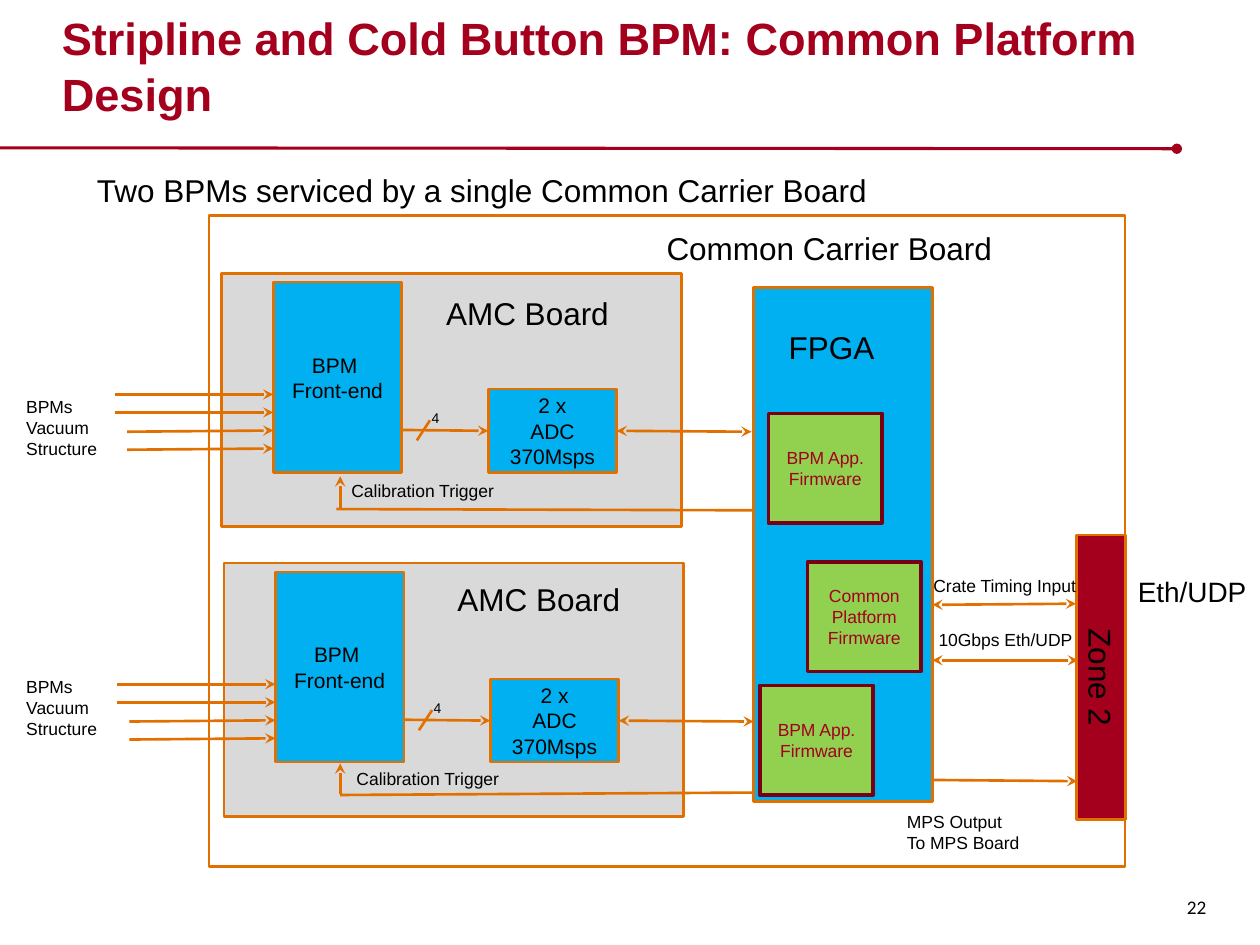
"""Build the slide on the common platform design of the BPMs."""
from lxml.etree import SubElement as Sub
from pptx import Presentation
from pptx.dml.color import RGBColor
from pptx.enum.shapes import MSO_CONNECTOR as Conn, MSO_SHAPE as Form
from pptx.enum.text import MSO_ANCHOR as Anchor, MSO_AUTO_SIZE as Auto, PP_ALIGN as Align
from pptx.oxml.ns import qn
from pptx.util import Pt

RED, ORANGE, BLUE, GREEN = "A4001D", "E17000", "00B0F0", "92D050"
WHITE, GREY, BLACK, MAROON = "FFFFFF", "D9D9D9", "000000", "780015"


def tint(code):
    return RGBColor.from_string(code)


class Pen:
    def __init__(self, slide, face="Arial"):
        self.slide = slide
        self.face = face

    def letter(self, frame, text, size, color=BLACK, align=Align.LEFT,
               anchor=Anchor.TOP, pad=7.2, wrap=True, face=None, bold=False):
        frame.auto_size = Auto.NONE
        frame.word_wrap = wrap
        frame.vertical_anchor = anchor
        frame.margin_left = frame.margin_right = Pt(pad)
        frame.margin_top = frame.margin_bottom = Pt(pad)
        for index, line in enumerate(text.split("\n")):
            para = frame.add_paragraph() if index else frame.paragraphs[0]
            para.alignment = align
            run = para.add_run()
            run.text = line
            run.font.size = Pt(size)
            run.font.name = face or self.face
            run.font.bold = bold
            run.font.color.rgb = tint(color)

    def title(self, text, x, y, w, h):
        shape = self.slide.shapes.title
        shape.left, shape.top, shape.width, shape.height = map(Pt, (x, y, w, h))
        self.letter(shape.text_frame, text, 25.8, RED, anchor=Anchor.BOTTOM,
                    pad=0, bold=True)
        shape.text_frame.paragraphs[0].line_spacing = 1.04

    def label(self, text, x, y, w, h, size=10, **style):
        box = self.slide.shapes.add_textbox(*map(Pt, (x, y, w, h)))
        self.letter(box.text_frame, text, size, **style)

    def head(self, text, x, y, w, h=27.4, size=18):
        self.label(text, x, y, w, h, size, pad=3.6, wrap=False)

    def block(self, x, y, w, h, fill, text="", size=12, color=BLACK,
              edge=ORANGE, thick=1.5, turn=0):
        shape = self.slide.shapes.add_shape(Form.RECTANGLE, *map(Pt, (x, y, w, h)))
        shape.shadow.inherit = False
        shape.rotation = turn
        shape.fill.solid()
        shape.fill.fore_color.rgb = tint(fill)
        shape.line.color.rgb = tint(edge)
        shape.line.width = Pt(thick)
        if text:
            self.letter(shape.text_frame, text, size, color, Align.CENTER,
                        Anchor.MIDDLE, pad=3.6)

    def line(self, x1, y1, x2, y2, head=None, tail=None, color=ORANGE, thick=1.5):
        link = self.slide.shapes.add_connector(
            Conn.STRAIGHT, *map(Pt, (x1, y1, x2, y2)))
        link.line.color.rgb = tint(color)
        link.line.width = Pt(thick)
        props = link.element.spPr
        for tag, kind in (("a:headEnd", head), ("a:tailEnd", tail)):
            if kind:
                Sub(props.find(qn("a:ln")), qn(tag), type=kind)
        Sub(props, qn("a:effectLst"))

    def arrow(self, *ends):
        self.line(*ends, tail="stealth")

    def both(self, *ends):
        self.line(*ends, head="stealth", tail="stealth")

    def board(self, x, y):
        self.block(x, y, 262.8, 144.7, GREY)
        front, adc = x + 29.5, x + 152.3
        self.block(front, y + 5, 73.4, 108.7, BLUE, "BPM \nFront-end")
        self.block(adc, y + 66.2, 73.4, 47.5, BLUE, "2 x\nADC\n370Msps")
        for row, (start, drop) in enumerate([(90.7, 0), (90.7, 0), (83.5, 0.7), (83.5, 0.7)]):
            level = y + 69.2 + row * 10.3
            self.arrow(front - start, level + drop, front, level)
        mid = y + 89.5
        self.arrow(front + 73.4, mid, adc, mid + 0.5)
        self.line(x + 119, mid - 5.5, x + 111.5, mid + 6)
        self.label("4", x + 117.5, y + 77.8, 9.4, 12, 8, align=Align.CENTER,
                   pad=0, wrap=False)
        self.both(adc + 73.4, mid + 0.5, adc + 150.5, mid + 1)

    def trigger(self, x, y, end, rise, note):
        self.line(x, y, *end)
        self.arrow(194.4, y - 0.7, 194.4, y - 0.7 - rise)
        self.label("Calibration Trigger", *note, 107.3, 25.2, anchor=Anchor.MIDDLE)


def main():
    deck = Presentation()
    deck.slide_width, deck.slide_height = Pt(720), Pt(540)
    pen = Pen(deck.slides.add_slide(deck.slide_layouts[5]))

    pen.line(0, 84.5, 672.5, 85, tail="oval", color=RED, thick=1.75)
    pen.title("Stripline and Cold Button BPM: Common Platform Design",
              35.3, 10, 676, 59)
    pen.label("22", 674.6, 509, 20.2, 18.7, 11, face="Calibri", pad=3.6,
              wrap=False, anchor=Anchor.MIDDLE)

    pen.block(119.5, 123, 523.5, 372.2, WHITE)
    pen.block(430.6, 164.2, 102.2, 293.8, BLUE)
    pen.block(547.9, 373, 162.7, 28.1, RED, "Zone 2", 18, turn=90)
    pen.board(126.7, 156.2)
    pen.board(127.9, 321.8)
    pen.trigger(192.2, 290.9, (430.6, 291.6), 18, (193.7, 267.8))
    pen.trigger(194.4, 454.3, (431, 452.9), 17.3, (196.6, 432))
    for top in (221, 381):
        pen.label("BPMs Vacuum Structure", 7.9, top, 61.9, 46.8, anchor=Anchor.MIDDLE)

    for text, x, y in (("BPM App. Firmware", 439.2, 236.2),
                       ("BPM App. Firmware", 434.2, 391.7),
                       ("Common\nPlatform Firmware", 461.5, 321.1)):
        pen.block(x, y, 64.8, 62.6, GREEN, text, 10, RED, MAROON, 2)

    pen.both(532.8, 345.6, 614.9, 345)
    pen.both(532.8, 377.3, 616, 377.3)
    pen.arrow(532.8, 445.7, 615.6, 446.4)
    pen.label("Crate Timing Input", 526.3, 321.1, 100, 25.2)
    pen.label("10Gbps Eth/UDP", 529.2, 352.1, 97.2, 25.2)
    pen.label("MPS Output\nTo MPS Board", 511.2, 456.5, 100, 36)

    pen.head("Two BPMs serviced by a single Common Carrier Board", 51.8, 94.3, 448.6)
    pen.head("Common Carrier Board", 377.3, 127.4, 194.4)
    pen.head("FPGA", 447.1, 183.6, 56.9)
    pen.head("AMC Board", 251.3, 164.2, 101.5)
    pen.head("AMC Board", 257.8, 327.6, 101.5)
    pen.head("Eth/UDP", 646.6, 324.7, 70.6, 24.5, 16)
    deck.save("out.pptx")


if __name__ == "__main__":
    main()
